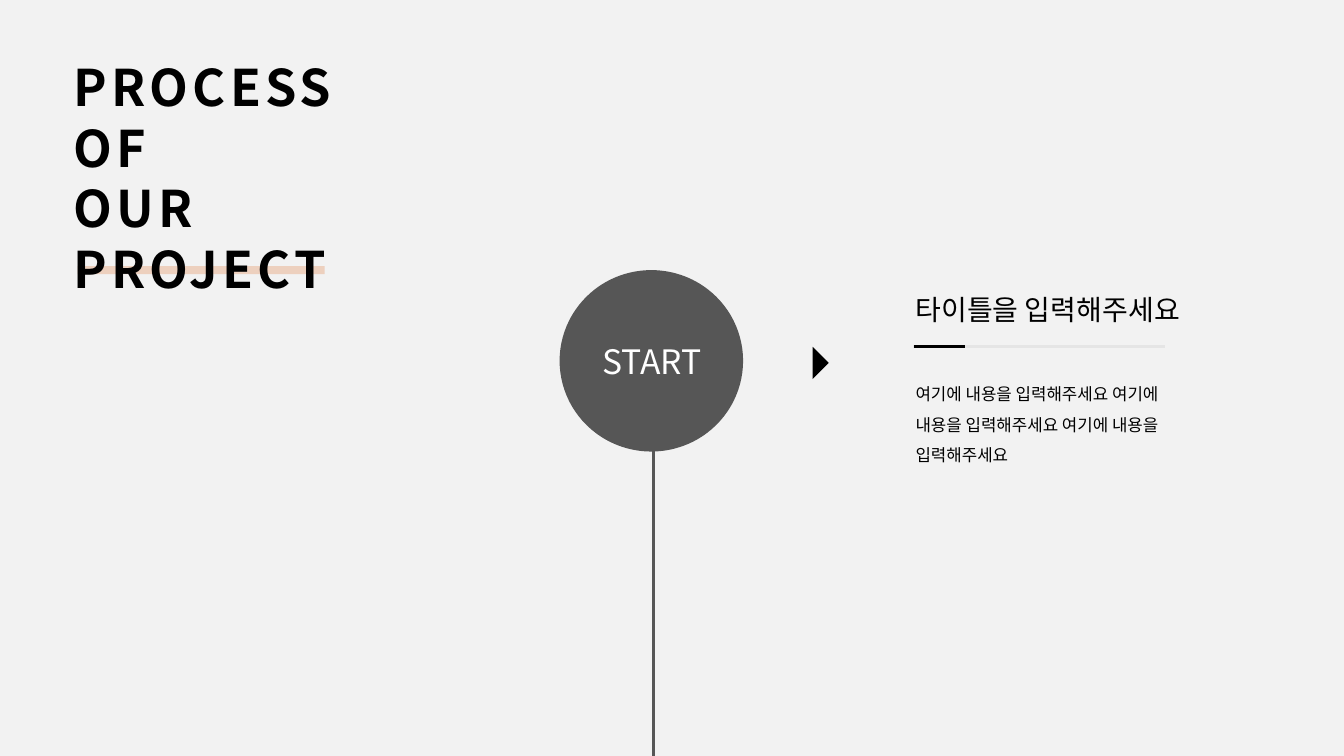
from pptx import Presentation
from pptx.dml.color import RGBColor
from pptx.enum.shapes import MSO_CONNECTOR, MSO_SHAPE
from pptx.enum.text import MSO_ANCHOR, MSO_AUTO_SIZE, PP_ALIGN
from pptx.oxml.ns import qn
from pptx.util import Inches, Pt
from lxml import etree

LEFT, MID = PP_ALIGN.LEFT, PP_ALIGN.CENTER
TOP, CENTER = MSO_ANCHOR.TOP, MSO_ANCHOR.MIDDLE
OVAL, RECT = MSO_SHAPE.OVAL, MSO_SHAPE.RECTANGLE
LINE = MSO_CONNECTOR.STRAIGHT
FONT = "Noto Sans CJK KR"
BLACK, GREY = "000000", "565656"


def paint(fill, hue):
    fill.solid()
    fill.fore_color.rgb = RGBColor.from_string(hue)


def write(box, area, lines, font, para, frame, pad):
    """Place a text shape and fill it with formatted paragraphs."""
    box.left, box.top, box.width, box.height = map(Inches, area)
    text = box.text_frame
    text.text = "\n".join(lines)
    text.word_wrap, text.auto_size = True, MSO_AUTO_SIZE.NONE
    for side, gap in zip(("left", "right", "top", "bottom"), pad):
        setattr(text, "margin_" + side, Inches(gap))
    for key, value in frame.items():
        setattr(text, key, value)
    for item in text.paragraphs:
        for key, value in para.items():
            setattr(item, key, value)
        for run in item.runs:
            paint(run.font.fill, font["hue"])
            run.font.name, run.font.size = FONT, Pt(font["size"])
            run.font.bold = font.get("bold", False)
            props = run.font._element
            etree.SubElement(props, qn("a:ea")).set("typeface", FONT)
            if "gap" in font:
                props.set("spc", str(font["gap"] * 100))


# Slide and background
deck = Presentation()
deck.slide_width, deck.slide_height = Inches(13.33), Inches(7.5)
slide = deck.slides.add_slide(deck.slide_layouts[1])
paint(slide.background.fill, "F2F2F2")
shapes = slide.shapes
title, body = slide.placeholders

# Lines: stem below the circle, pale rule and its dark start
ends = [
    (6.48, 3.53, 6.48, 7.5, GREY),
    (9.06, 3.44, 11.55, 3.44, "E5E5E5"),
    (9.07, 3.44, 9.57, 3.44, BLACK),
]
for x1, y1, x2, y2, hue in ends:
    line = shapes.add_connector(LINE, *map(Inches, (x1, y1, x2, y2)))
    paint(line.line.fill, hue)
    line.line.width = Pt(2)
    etree.SubElement(line._element.spPr, qn("a:effectLst"))

# Title bar, start circle and arrow (drawn in hundredths of an inch)
bar = shapes.add_shape(RECT, *map(Inches, (0.77, 2.64, 2.45, 0.08)))
disc = shapes.add_shape(OVAL, *map(Inches, (5.55, 2.68, 1.82, 1.8)))
pen = shapes.build_freeform(806, 376, scale=Inches(0.01))
pen.add_line_segments([(822, 360), (806, 344)], close=True)
arrow = pen.convert_to_shape()
for form, hue in ((bar, "EDD0BE"), (disc, GREY), (arrow, BLACK)):
    paint(form.fill, hue)
    form.line.fill.background()
    form.shadow.inherit = False

# Title, raised above its bar
bar._element.addnext(title._element)
write(title, (0.63, 0.51, 5.16, 2.52),
      ["PROCESS", "OF\vOUR", "PROJECT"],
      {"size": 36, "hue": BLACK, "bold": True, "gap": 3},
      {"alignment": LEFT}, {"vertical_anchor": TOP},
      (0.1, 0.1, 0.05, 0.05))

# Circle label, heading and body text
tight = (0.04,) * 4
label, head = [shapes.add_textbox(0, 0, 0, 0) for _ in range(2)]
write(label, (5.89, 3.34, 1.16, 0.49), ["START"],
      {"size": 24, "hue": "FFFFFF"},
      {"alignment": MID}, {"vertical_anchor": CENTER}, tight)
write(head, (9.04, 2.86, 2.77, 0.46), ["타이틀을 입력해주세요"],
      {"size": 20, "hue": BLACK},
      {"alignment": LEFT}, {"vertical_anchor": TOP}, tight)
write(body, (9.04, 3.67, 2.69, 1.33),
      [" ".join(["여기에 내용을 입력해주세요"] * 3)],
      {"size": 12, "hue": BLACK},
      {"alignment": LEFT, "line_spacing": 1.5, "space_before": Pt(0)},
      {"vertical_anchor": TOP}, tight)

# Body text without bullet or indent
props = body.text_frame.paragraphs[0]._p.get_or_add_pPr()
props.set("marL", "0")
props.set("indent", "0")
etree.SubElement(props, qn("a:buNone"))

deck.save("out.pptx")
